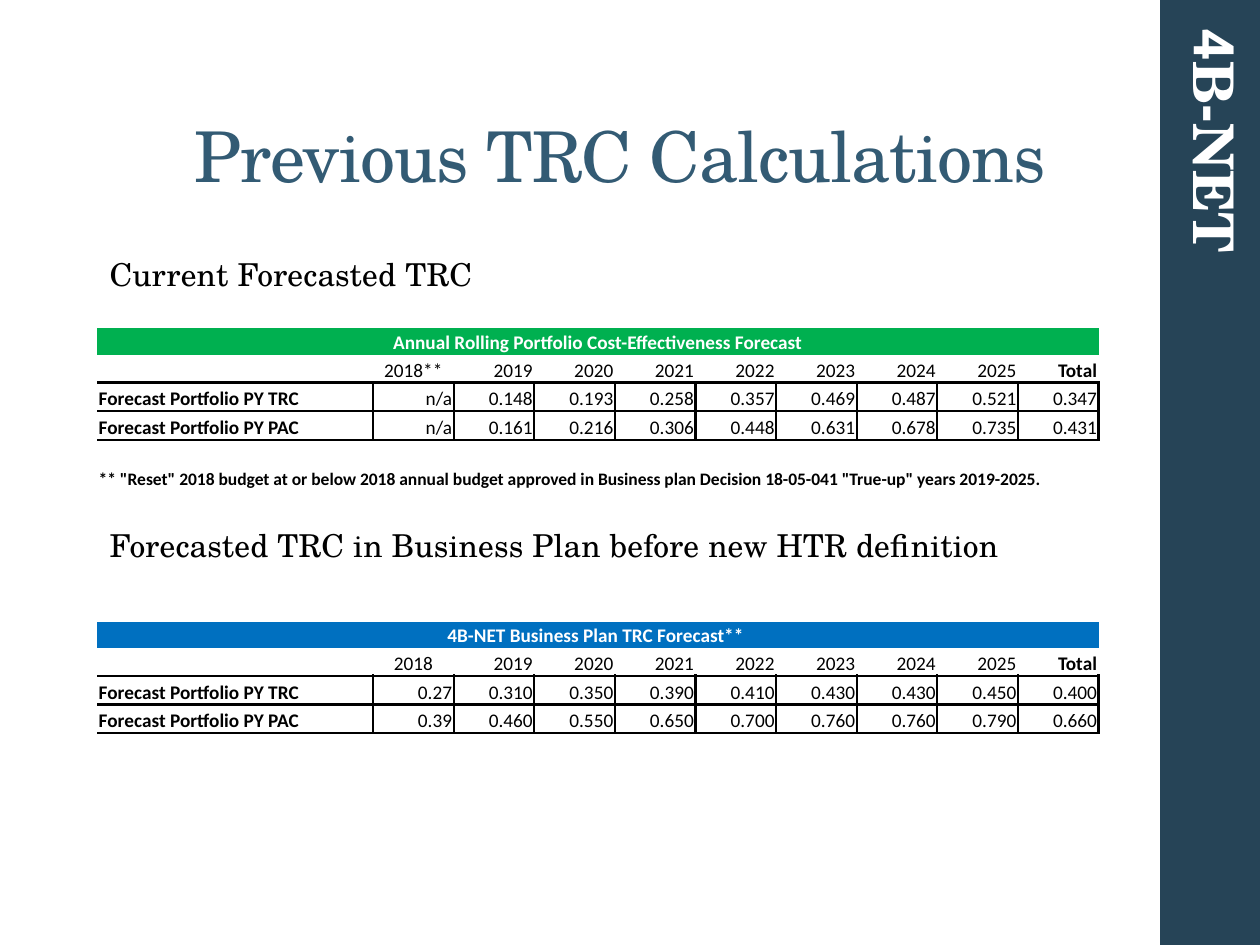
import pptx
import pptx.dml.color
import pptx.enum.shapes
import pptx.enum.text
import pptx.oxml.ns
import pptx.util
from dataclasses import dataclass
from lxml import etree

Cm, Pt = pptx.util.Cm, pptx.util.Pt
ALIGN = pptx.enum.text.PP_ALIGN
ANCHOR = pptx.enum.text.MSO_ANCHOR
qn = pptx.oxml.ns.qn


@dataclass(frozen=True)
class Theme:
    serif: str = "TeX Gyre Schola"
    sans: str = "Calibri"
    digit: str = "Roboto"
    white: str = "FFFFFF"
    black: str = "000000"
    sidebar: str = "264457"
    title: str = "335B74"
    green: str = "00B050"
    blue: str = "0070C0"
    title_size: int = 40
    brand_size: int = 32
    heading_size: int = 18
    table_size: int = 11
    note_size: int = 10
    rule: float = 1.5


THEME = Theme()
NO_TABLE_STYLE = "{2D5ABB26-0587-4C30-8999-92F81FD0307C}"
LABEL_COLS = [2.21, 3.35]
ROW_HEIGHTS = [0.53, 0.56, 0.58, 0.58, 0.56, 1.12]
YEARS = ["2019", "2020", "2021", "2022", "2023", "2024", "2025", "Total"]
NOTE = ('** "Reset" 2018 budget at or below 2018 annual budget approved in Business plan '
        'Decision 18-05-041 "True-up" years 2019-2025.')


def apply(target, values):
    for name, value in values.items():
        setattr(target, name, value)


def add_run(paragraph, text, font, size, color, bold=False, spacing=0):
    run = paragraph.add_run()
    run.text = text
    apply(run.font, {"name": font, "size": Pt(size), "bold": bold})
    run.font.color.rgb = pptx.dml.color.RGBColor.from_string(color)
    if spacing:
        run._r.get_or_add_rPr().set("spc", str(spacing))


def add_text_box(slide, box, frame_format, paragraph_format):
    text_box = slide.shapes.add_textbox(*map(Cm, box))
    apply(text_box.text_frame, {"word_wrap": True, **frame_format})
    paragraph = text_box.text_frame.paragraphs[0]
    apply(paragraph, paragraph_format)
    return text_box, paragraph


# Sidebar with the vertical programme name
def add_sidebar(slide, box):
    left, top, width, height = box
    band = slide.shapes.add_shape(pptx.enum.shapes.MSO_SHAPE.RECTANGLE, *map(Cm, box))
    band.shadow.inherit = False
    band.fill.solid()
    band.fill.fore_color.rgb = pptx.dml.color.RGBColor.from_string(THEME.sidebar)
    band.line.fill.background()

    name_width, name_height = 6.7, 1.63
    name_box = (left + width / 2 - name_width / 2 + 0.1, top + 2.87, name_width, name_height)
    programme, paragraph = add_text_box(slide, name_box, {}, {})
    programme.rotation = 90
    for text, font in (("4", THEME.digit), ("B-NET", THEME.serif)):
        add_run(paragraph, text, font, THEME.brand_size, THEME.white, bold=True)


def add_title(slide, box, text):
    _, paragraph = add_text_box(slide, box, {"vertical_anchor": ANCHOR.BOTTOM},
                                {"alignment": ALIGN.CENTER, "line_spacing": 0.9})
    add_run(paragraph, text, THEME.serif, THEME.title_size, THEME.title, spacing=-50)


def add_heading(slide, box, text):
    _, paragraph = add_text_box(slide, box, {}, {
        "line_spacing": 0.95, "space_before": Pt(14), "space_after": Pt(2)})
    add_run(paragraph, text, THEME.serif, THEME.heading_size, THEME.black, spacing=10)


def set_borders(cell, sides):
    properties = cell._tc.get_or_add_tcPr()
    for position, side in enumerate("LRTB"):
        line = etree.Element(qn(f"a:ln{side}"), w=str(Pt(THEME.rule)))
        if side in sides:
            fill = etree.SubElement(line, qn("a:solidFill"))
            etree.SubElement(fill, qn("a:srgbClr"), val=THEME.black)
        else:
            etree.SubElement(line, qn("a:noFill"))
        properties.insert(position, line)


def format_cell(cell, sides, fill=None):
    apply(cell, {"margin_left": Cm(0.03), "margin_right": Cm(0.03), "margin_top": Cm(0.03),
                 "margin_bottom": 0, "vertical_anchor": ANCHOR.BOTTOM})
    if fill:
        cell.fill.solid()
        cell.fill.fore_color.rgb = pptx.dml.color.RGBColor.from_string(fill)
    else:
        cell.fill.background()
    set_borders(cell, sides)


def write_cell(cell, text, alignment, size=THEME.table_size, color=THEME.black, bold=False):
    paragraph = cell.text_frame.paragraphs[0]
    paragraph.alignment = alignment
    add_run(paragraph, text, THEME.sans, size, color, bold)


def add_forecast(slide, box, banner, banner_fill, first_year, rows, note=None):
    left, top, width = box
    heights = ROW_HEIGHTS if note else ROW_HEIGHTS[:4]
    year_count = len(YEARS) + 1
    widths = LABEL_COLS + [(width - sum(LABEL_COLS)) / year_count] * year_count
    table = slide.shapes.add_table(len(heights), len(widths), Cm(left), Cm(top),
                                   Cm(width), Cm(sum(heights))).table
    apply(table, {"first_row": False, "horz_banding": False})
    table._tbl.tblPr.find(qn("a:tableStyleId")).text = NO_TABLE_STYLE
    for column, column_width in zip(table.columns, widths):
        column.width = Cm(column_width)
    for row, height in zip(table.rows, heights):
        row.height = Cm(height)

    # Rules by row; the label has no left edge
    row_sides = ["", "B", "LRTB", "LRTB", "T", ""]
    for r in range(len(heights)):
        for c in range(len(widths)):
            sides = row_sides[r]
            if r in (2, 3) and c < 2:
                sides = "TB" if c == 0 else "RTB"
            format_cell(table.cell(r, c), sides, banner_fill if r == 0 else None)

    # Banner and year header
    last = len(widths) - 1
    table.cell(0, 0).merge(table.cell(0, last))
    write_cell(table.cell(0, 0), banner, ALIGN.CENTER, color=THEME.white, bold=True)
    for c, year in enumerate([first_year] + YEARS, 2):
        write_cell(table.cell(1, c), year, ALIGN.CENTER if c == 2 else ALIGN.RIGHT,
                   bold=year == "Total")

    # Forecast values
    for r, (label, values) in enumerate(rows.items(), 2):
        table.cell(r, 0).merge(table.cell(r, 1))
        write_cell(table.cell(r, 0), label, ALIGN.LEFT, bold=True)
        for c, value in enumerate(values.split(), 2):
            write_cell(table.cell(r, c), value, ALIGN.RIGHT)

    if note:
        note_row = len(heights) - 1
        note_cell = table.cell(note_row, 0)
        note_cell.merge(table.cell(note_row, last))
        note_cell.vertical_anchor = ANCHOR.TOP
        write_cell(note_cell, note, ALIGN.LEFT, THEME.note_size, bold=True)

    # Empty cells keep the table's type size so rows stay low
    for cell in table.iter_cells():
        if not cell.text_frame.text:
            etree.SubElement(cell.text_frame.paragraphs[0]._p, qn("a:endParaRPr"),
                             sz=str(THEME.table_size * 100))


def main():
    deck = pptx.Presentation()
    apply(deck, {"slide_width": Cm(25.4), "slide_height": Cm(19.05)})
    slide = deck.slides.add_slide(deck.slide_layouts[6])
    left, width = 1.96, 20.19

    add_sidebar(slide, (23.39, 0, 2.03, 19.05))
    add_title(slide, (2.59, 0.43, width, 3.68), "Previous TRC Calculations ")
    add_heading(slide, (left, 5.08, 18.57, 1.55), "Current Forecasted TRC")
    add_forecast(slide, (left, 6.62, width), "Annual Rolling Portfolio Cost-Effectiveness Forecast",
                 THEME.green, "2018**", {
                     "Forecast Portfolio PY TRC": "n/a 0.148 0.193 0.258 0.357 0.469 0.487 0.521 0.347",
                     "Forecast Portfolio PY PAC": "n/a 0.161 0.216 0.306 0.448 0.631 0.678 0.735 0.431",
                 }, NOTE)
    add_heading(slide, (left, 10.54, 18.57, 1.55),
                "Forecasted TRC in Business Plan before new HTR definition")
    add_forecast(slide, (left, 12.53, width), "4B-NET Business Plan TRC Forecast** ",
                 THEME.blue, "2018", {
                     "Forecast Portfolio PY TRC": "0.27 0.310 0.350 0.390 0.410 0.430 0.430 0.450 0.400",
                     "Forecast Portfolio PY PAC": "0.39 0.460 0.550 0.650 0.700 0.760 0.760 0.790 0.660",
                 })
    deck.save("out.pptx")


if __name__ == "__main__":
    main()
